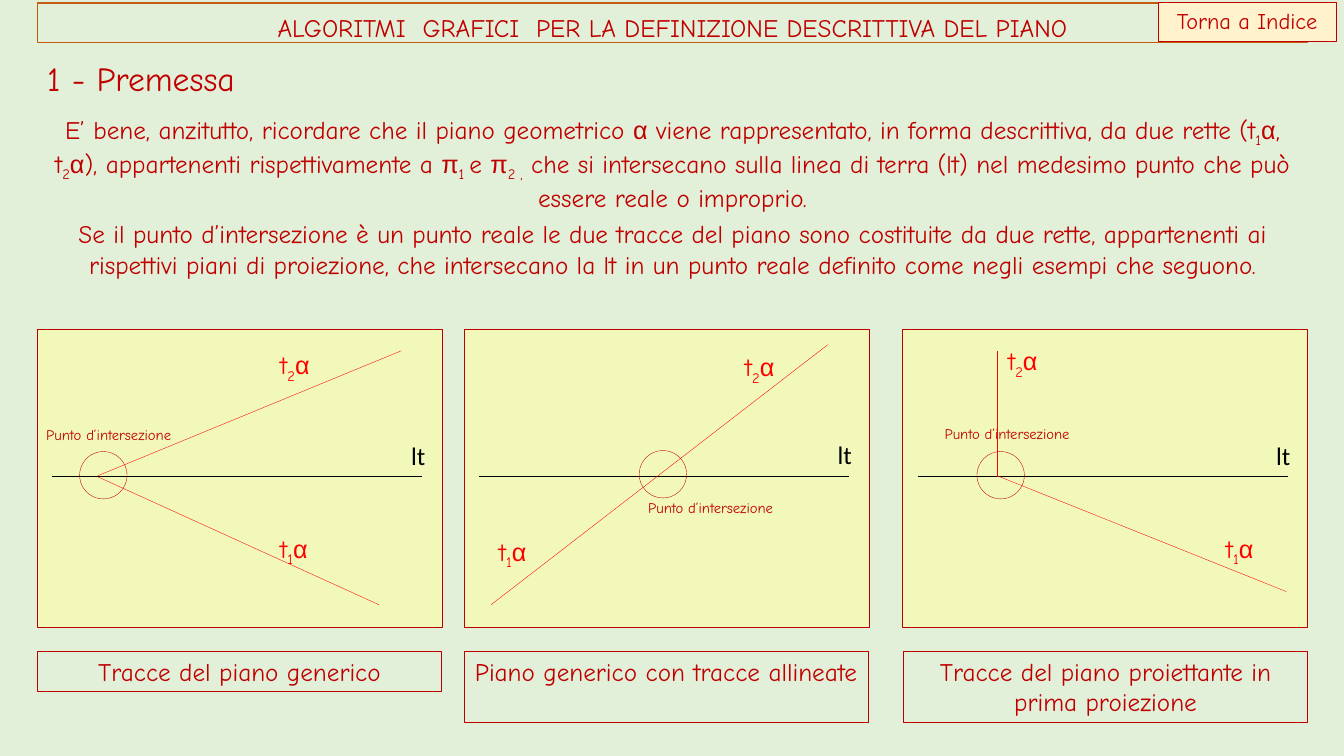
"""Build the slide on the traces of a plane in descriptive geometry."""
from dataclasses import dataclass
from itertools import groupby

from lxml import etree
from pptx import Presentation
from pptx.dml.color import RGBColor
from pptx.enum.shapes import MSO_CONNECTOR, MSO_SHAPE
from pptx.enum.text import MSO_ANCHOR, MSO_AUTO_SIZE, PP_ALIGN
from pptx.oxml.ns import qn
from pptx.util import Inches, Pt

RECTANGLE, CIRCLE = MSO_SHAPE.RECTANGLE, MSO_SHAPE.OVAL
STRAIGHT = MSO_CONNECTOR.STRAIGHT
LEFT, CENTER = PP_ALIGN.LEFT, PP_ALIGN.CENTER
FRAME_FORMAT = {
    "word_wrap": True,
    "vertical_anchor": MSO_ANCHOR.TOP,
    "auto_size": MSO_AUTO_SIZE.SHAPE_TO_FIT_TEXT,
}
BACKGROUND, PANEL_FILL, INDEX_FILL = "E2F0D9", "F1F8B9", "FFF2CC"
DARK_RED, RED, BLACK, ORANGE = "C00000", "FF0000", "000000", "C55A11"
MAIN_FONT, GREEK_FONT, LT_FONT = "Comic Neue", "Arial", "Calibri"
GREEK = "απ"
MARGIN, CONTENT_WIDTH = 0.37, 12.6
PANEL_TOP, PANEL_WIDTH, PANEL_HEIGHT = 3.27, 4.02, 2.95
GROUND_Y, CIRCLE_SIZE = 4.72, 0.47

Point = tuple[float, float]
Box = tuple[float, float, float, float]


@dataclass(frozen=True)
class Style:
    size: float = 18
    color: str = DARK_RED
    font: str = MAIN_FONT
    align: PP_ALIGN = CENTER
    spacing: float = 1.0


@dataclass(frozen=True)
class Panel:
    left: float
    lt_top: float
    traces: tuple[tuple[Point, Point], ...]
    first_label: Point
    second_label: Point
    note: Point
    circle: Point
    caption: str
    caption_left: float
    caption_height: float


BODY = Style()
TITLE = Style(spacing=1.15)
HEADING = Style(size=24, align=LEFT)
INDEX = Style(size=16)
NOTE = Style(size=10.5, align=LEFT)
TRACE = Style(color=RED, align=LEFT)
GROUND = Style(color=BLACK, font=LT_FONT, align=LEFT)

PARAGRAPHS = (
    (1.08, "E’ bene, anzitutto, ricordare che il piano geometrico α viene rappresentato, "
           "in forma descrittiva, da due rette (t_1_α, t_2_α), appartenenti rispettivamente "
           "a π_1 _e π_2 ,_ che si intersecano sulla linea di terra (lt) nel medesimo punto "
           "che può essere reale o improprio."),
    (2.12, "Se il punto d’intersezione è un punto reale le due tracce del piano sono "
           "costituite da due rette, appartenenti ai rispettivi piani di proiezione, che "
           "intersecano la lt in un punto reale definito come negli esempi che seguono."),
)
PANELS = (
    Panel(0.37, 4.32, (((0.97, 4.72), (3.98, 3.48)), ((0.97, 4.73), (3.76, 6))),
          (2.68, 5.24), (2.68, 3.42), (0.36, 4.18), (0.79, 4.48),
          "Tracce del piano generico", 0.37, 0.4),
    Panel(4.6, 4.31, (((4.87, 6), (8.21, 3.42)),),
          (4.85, 5.27), (7.29, 3.44), (6.33, 4.9), (6.34, 4.47),
          "Piano generico con tracce allineate", 4.6, 0.71),
    Panel(8.95, 4.32, (((9.89, 3.48), (9.89, 4.73)), ((9.89, 4.72), (12.76, 5.87))),
          (12.06, 5.24), (9.9, 3.38), (9.27, 4.17), (9.69, 4.48),
          "Tracce del piano proiettante in prima proiezione", 8.96, 0.71),
)


def rgb(color: str) -> RGBColor:
    return RGBColor.from_string(color)


def write(frame, text: str, style: Style) -> None:
    for name, value in FRAME_FORMAT.items():
        setattr(frame, name, value)
    paragraph = frame.paragraphs[0]
    paragraph.alignment = style.align
    paragraph.line_spacing = style.spacing
    for index, part in enumerate(text.split("_")):
        for is_greek, letters in groupby(part, key=lambda letter: letter in GREEK):
            run = paragraph.add_run()
            run.text = "".join(letters)
            font_format = {
                "name": GREEK_FONT if is_greek else style.font,
                "size": Pt(style.size),
            }
            for name, value in font_format.items():
                setattr(run.font, name, value)
            run.font.color.rgb = rgb(style.color)
            if index % 2:
                run._r.get_or_add_rPr().set("baseline", "-25000")


def add_text(shapes, box: Box, text: str, style: Style) -> None:
    write(shapes.add_textbox(*map(Inches, box)).text_frame, text, style)


def add_outline(shapes, kind: MSO_SHAPE, box: Box, line: str = DARK_RED,
                weight: float = 0.25, fill: str = "", text: str = "",
                style: Style = BODY) -> None:
    outline = shapes.add_shape(kind, *map(Inches, box))
    outline.shadow.inherit = False
    if fill:
        outline.fill.solid()
        outline.fill.fore_color.rgb = rgb(fill)
    else:
        outline.fill.background()
    outline.line.color.rgb = rgb(line)
    outline.line.width = Pt(weight)
    if text:
        write(outline.text_frame, text, style)


def add_line(shapes, start: Point, end: Point, color: str) -> None:
    line = shapes.add_connector(STRAIGHT, *map(Inches, (*start, *end)))
    line.line.color.rgb = rgb(color)
    line.line.width = Pt(0.25)
    etree.SubElement(line._element.spPr, qn("a:effectLst"))


def draw_panel(shapes, panel: Panel) -> None:
    add_outline(shapes, RECTANGLE, (panel.left, PANEL_TOP, PANEL_WIDTH, PANEL_HEIGHT),
                fill=PANEL_FILL)
    add_line(shapes, (panel.left + 0.15, GROUND_Y), (panel.left + 3.82, GROUND_Y), BLACK)
    add_text(shapes, (panel.left + 3.61, panel.lt_top, 0.4, 0.4), "lt", GROUND)
    for start, end in panel.traces:
        add_line(shapes, start, end, RED)
    for number, corner in enumerate((panel.first_label, panel.second_label), 1):
        add_text(shapes, (*corner, 0.59, 0.4), f"t_{number}_α", TRACE)


def main() -> None:
    presentation = Presentation()
    presentation.slide_width = Inches(13.33)
    presentation.slide_height = Inches(7.5)
    slide = presentation.slides.add_slide(presentation.slide_layouts[6])
    slide.background.fill.solid()
    slide.background.fill.fore_color.rgb = rgb(BACKGROUND)
    shapes = slide.shapes

    for top, text in PARAGRAPHS:
        add_text(shapes, (MARGIN, top, CONTENT_WIDTH, 1.01), text, BODY)
    for panel in PANELS:
        add_outline(shapes, RECTANGLE, (panel.caption_left, 6.46, 4.01, panel.caption_height),
                    text=panel.caption)
    add_outline(shapes, RECTANGLE, (MARGIN, 0.03, CONTENT_WIDTH, 0.39), ORANGE, 0.75,
                text="ALGORITMI  GRAFICI  PER LA DEFINIZIONE DESCRITTIVA DEL PIANO",
                style=TITLE)
    for panel in PANELS:
        draw_panel(shapes.add_group_shape().shapes, panel)
    add_text(shapes, (MARGIN, 0.53, 2.32, 0.5), "1 - Premessa", HEADING)
    for panel in PANELS:
        add_text(shapes, (*panel.note, 1.78, 0.28), "Punto d’intersezione", NOTE)
        add_outline(shapes, CIRCLE, (*panel.circle, CIRCLE_SIZE, CIRCLE_SIZE))
    add_outline(shapes, RECTANGLE, (11.49, 0.02, 1.76, 0.39), fill=INDEX_FILL,
                text="Torna a Indice", style=INDEX)
    presentation.save("out.pptx")


if __name__ == "__main__":
    main()
